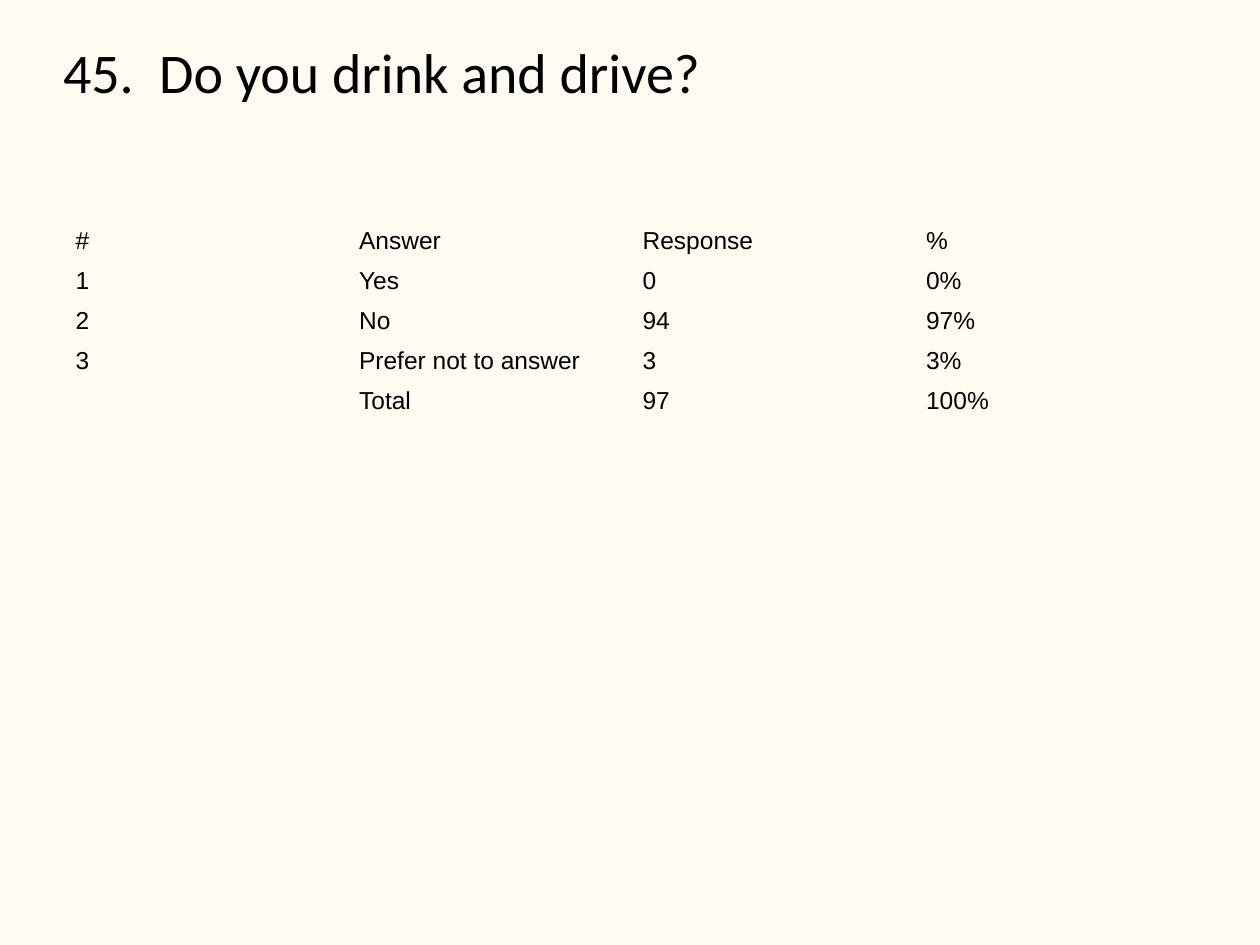
from dataclasses import dataclass

from lxml.etree import SubElement
from pptx import Presentation
from pptx.dml.color import RGBColor
from pptx.enum.text import MSO_ANCHOR, MSO_AUTO_SIZE, PP_ALIGN
from pptx.oxml.ns import qn
from pptx.shapes.autoshape import Shape
from pptx.slide import Slide
from pptx.text.text import TextFrame
from pptx.util import Inches, Pt

NO_STYLE_NO_GRID = "{2D5ABB26-0587-4C30-8999-92F81FD0307C}"


@dataclass(frozen=True)
class Theme:
    background: RGBColor = RGBColor(0xFF, 0xFB, 0xF0)
    text: RGBColor = RGBColor(0, 0, 0)
    title_font: str = "Calibri"
    title_size: int = 32
    table_font: str = "Arial"
    table_size: int = 14


@dataclass(frozen=True)
class AnswerRow:
    number: str
    answer: str
    response: str
    percent: str

    def cells(self) -> tuple[str, ...]:
        return self.number, self.answer, self.response, self.percent


THEME = Theme()
LEFT, WIDTH = 0.5, 9
ROW_HEIGHT = 0.19
QUESTION = "45.  Do you drink and drive?"
ROWS = [
    AnswerRow("#", "Answer", "Response", "%"),
    AnswerRow("1", "Yes", "0", "0%"),
    AnswerRow("2", "No", "94", "97%"),
    AnswerRow("3", "Prefer not to answer", "3", "3%"),
    AnswerRow("", "Total", "97", "100%"),
]


def write(tf: TextFrame, text: str, font: str, size: int) -> None:
    tf.text = text
    p = tf.paragraphs[0]
    p.alignment = PP_ALIGN.LEFT
    for r in p.runs:
        r.font.name = font
        r.font.size = Pt(size)
        r.font.color.rgb = THEME.text


def set_round_rect(sp: Shape) -> None:
    """Give a placeholder a rounded outline with a corner radius of zero."""
    geometry = SubElement(sp._element.spPr, qn("a:prstGeom"), prst="roundRect")
    adjustments = SubElement(geometry, qn("a:avLst"))
    SubElement(adjustments, qn("a:gd"), name="adj", fmla="val 0")


def add_title(s: Slide) -> None:
    sp = s.shapes.title
    sp.left, sp.top = Inches(LEFT), Inches(0.3)
    sp.width, sp.height = Inches(WIDTH), Inches(1.25)
    set_round_rect(sp)
    tf = sp.text_frame
    tf.margin_left = tf.margin_right = tf.margin_top = tf.margin_bottom = 0
    tf.vertical_anchor = MSO_ANCHOR.TOP
    tf.auto_size = MSO_AUTO_SIZE.NONE
    write(tf, QUESTION, THEME.title_font, THEME.title_size)


def add_answer_table(s: Slide, rows: list[AnswerRow]) -> None:
    columns = len(rows[0].cells())
    table = s.shapes.add_table(
        len(rows), columns, Inches(LEFT), Inches(1.75),
        Inches(WIDTH), Inches(ROW_HEIGHT * len(rows)),
    ).table
    table.first_row = table.horz_banding = False
    style = table._tbl.tblPr.find(qn("a:tableStyleId"))
    style.text = NO_STYLE_NO_GRID
    for i, row in enumerate(rows):
        for j, text in enumerate(row.cells()):
            cell = table.cell(i, j)
            cell.fill.background()
            if text:
                write(cell.text_frame, text, THEME.table_font, THEME.table_size)


def main() -> None:
    prs = Presentation()
    prs.slide_width, prs.slide_height = Inches(10), Inches(7.5)
    s = prs.slides.add_slide(prs.slide_layouts[5])
    s.background.fill.solid()
    s.background.fill.fore_color.rgb = THEME.background
    add_title(s)
    add_answer_table(s, ROWS)
    prs.save("out.pptx")


if __name__ == "__main__":
    main()
